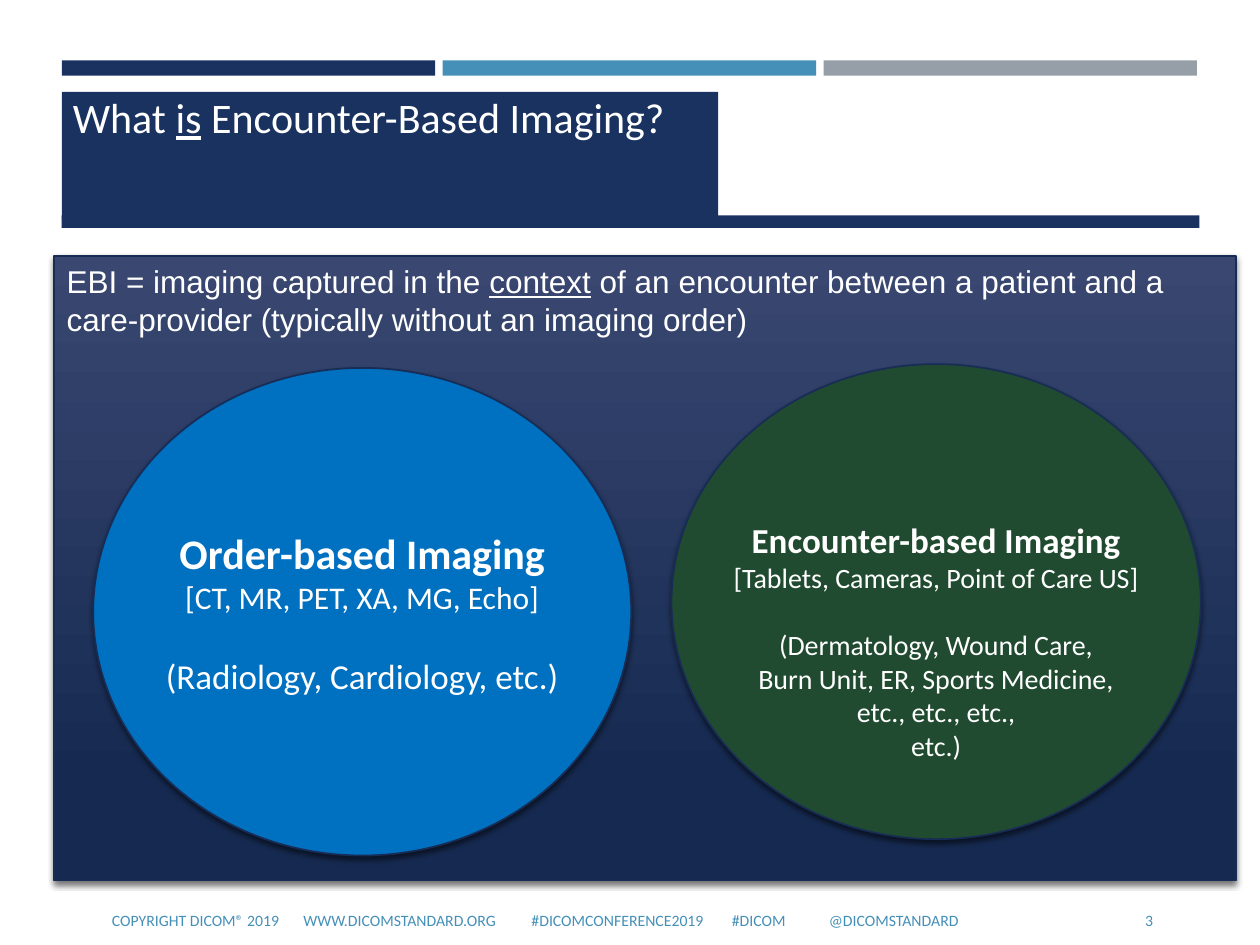
from lxml import etree
from pptx import Presentation
from pptx import util as u
from pptx.dml.color import RGBColor
from pptx.enum import shapes, text
from pptx.oxml import ns

COLORS = {
    "navy": "1A3260", "sky": "4590B8", "gray": "969FA7", "edge": "172D56",
    "top": "394771", "base": "162A51", "blue": "0070C0", "green": "214B30",
    "white": "FFFFFF", "black": "000000",
}
SHAPE = shapes.MSO_SHAPE
ALIGN = text.PP_ALIGN
ANCHOR = text.MSO_ANCHOR


def color(name):
    return RGBColor.from_string(COLORS[name])


def child(node, tag, **attrs):
    return etree.SubElement(node, ns.qn(tag), attrs)


def add_run(para, words, size, font="Calibri", hue="white", bold=False, under=False):
    run = para.add_run()
    run.text = words
    run.font.size = u.Pt(size)
    run.font.name = font
    run.font.bold = bold
    run.font.underline = under
    run.font.color.rgb = color(hue)


def add_form(slide, kind, box, fill=None):
    form = slide.shapes.add_shape(kind, *map(u.Inches, box))
    form.shadow.inherit = False
    form.line.fill.background()
    if fill:
        form.fill.solid()
        form.fill.fore_color.rgb = color(fill)
    return form


def raise_form(form):
    """Give a form its dark edge and soft shadow below."""
    form.line.color.rgb = color("edge")
    form.line.width = u.Pt(1)
    effects = form._element.spPr.find(ns.qn("a:effectLst"))
    shade = child(effects, "a:outerShdw", blurRad=str(u.Pt(3)), dist=str(u.Pt(2)),
                  dir="5400000", algn="ctr", rotWithShape="0")
    tint = child(shade, "a:srgbClr", val=COLORS["black"])
    child(tint, "a:alpha", val="55000")


def add_text(slide, box, anchor=ANCHOR.TOP):
    frame = slide.shapes.add_textbox(*map(u.Inches, box)).text_frame
    frame.word_wrap = True
    frame.vertical_anchor = anchor
    return frame.paragraphs[0]


def add_bars(slide, box):
    left, top, width, height = box
    gap = 0.06
    each = (width - 2 * gap) / 3
    for i, hue in enumerate(("navy", "sky", "gray")):
        add_form(slide, SHAPE.RECTANGLE, (left + i * (each + gap), top, each, height), hue)


def add_title(slide, box):
    left, top, width, height = box
    add_form(slide, SHAPE.RECTANGLE, (left, top, 5.21, height - 0.07), "navy")
    add_form(slide, SHAPE.RECTANGLE, (left, top + height - 0.1, width, 0.1), "navy")
    para = add_text(slide, (left - 0.01, top - 0.05, 8.74, 1.07))
    add_run(para, "What ", 24)
    add_run(para, "is", 24, under=True)
    add_run(para, " Encounter-Based Imaging?", 24)


def add_panel(slide, box):
    panel = add_form(slide, SHAPE.RECTANGLE, box)
    panel.fill.gradient()
    panel.fill.gradient_angle = 270
    for stop, (place, hue) in zip(panel.fill.gradient_stops, ((0, "top"), (0.84, "base"))):
        stop.position = place
        stop.color.rgb = color(hue)
    raise_form(panel)
    frame = panel.text_frame
    frame.word_wrap = True
    frame.vertical_anchor = ANCHOR.TOP
    para = frame.paragraphs[0]
    para.alignment = ALIGN.LEFT
    add_run(para, "EBI = imaging captured in the ", 18, "Arial")
    add_run(para, "context", 18, "Arial", under=True)
    add_run(para, " of an encounter between a patient and a care-provider"
                  " (typically without an imaging order)", 18, "Arial")


def add_oval(slide, box, fill, lines, inset=0.05):
    """Lines are (words, size, space before); the first is bold."""
    oval = add_form(slide, SHAPE.OVAL, box, fill)
    raise_form(oval)
    frame = oval.text_frame
    frame.word_wrap = False
    frame.vertical_anchor = ANCHOR.MIDDLE
    frame.margin_left = frame.margin_right = 0
    frame.margin_top = u.Inches(inset)
    for i, (words, size, gap) in enumerate(lines):
        para = frame.add_paragraph() if i else frame.paragraphs[0]
        para.alignment = ALIGN.CENTER
        if gap:
            para.space_before = u.Pt(gap)
        add_run(para, words, size, bold=i == 0)


def add_footer(slide, box):
    left, top, width, height = box
    para = add_text(slide, box, ANCHOR.MIDDLE)
    tabs = child(para._p.get_or_add_pPr(), "a:tabLst")
    for stop in (1.52, 3.33, 4.92, 5.69):
        child(tabs, "a:tab", pos=str(u.Inches(stop)), algn="l")
    parts = ("COPYRIGHT DICOM® 2019", "WWW.DICOMSTANDARD.ORG",
             "#DICOMCONFERENCE2019", "#DICOM", "@DICOMSTANDARD")
    add_run(para, "\t".join(parts), 9, hue="sky")
    page = add_text(slide, (left + width - 0.43, top, 0.43, height), ANCHOR.MIDDLE)
    page.alignment = ALIGN.RIGHT
    add_run(page, "3", 9, hue="sky")


def main():
    deck = Presentation()
    deck.slide_width, deck.slide_height = u.Inches(10), u.Inches(7.5)
    slide = deck.slides.add_slide(deck.slide_layouts[6])
    add_bars(slide, (0.49, 0.48, 9.01, 0.12))
    add_title(slide, (0.49, 0.73, 9.03, 1.08))
    add_panel(slide, (0.43, 2.03, 9.38, 4.96))
    add_oval(slide, (0.74, 2.92, 4.27, 3.87), "blue", (
        ("Order-based Imaging", 24, 0),
        ("[CT, MR, PET, XA, MG, Echo]", 18, 0),
        ("(Radiology, Cardiology, etc.)", 20, 22),
    ))
    add_oval(slide, (5.33, 2.89, 4.2, 3.77), "green", (
        ("Encounter-based Imaging", 20, 0),
        ("[Tablets, Cameras, Point of Care US]", 16, 0),
        ("(Dermatology, Wound Care,", 16, 19.5),
        ("Burn Unit, ER, Sports Medicine,", 16, 0),
        ("etc., etc., etc.,", 16, 0),
        ("etc.)", 16, 0),
    ), inset=0.66)
    add_footer(slide, (0.79, 7.11, 8.46, 0.39))
    deck.save("out.pptx")


if __name__ == "__main__":
    main()
